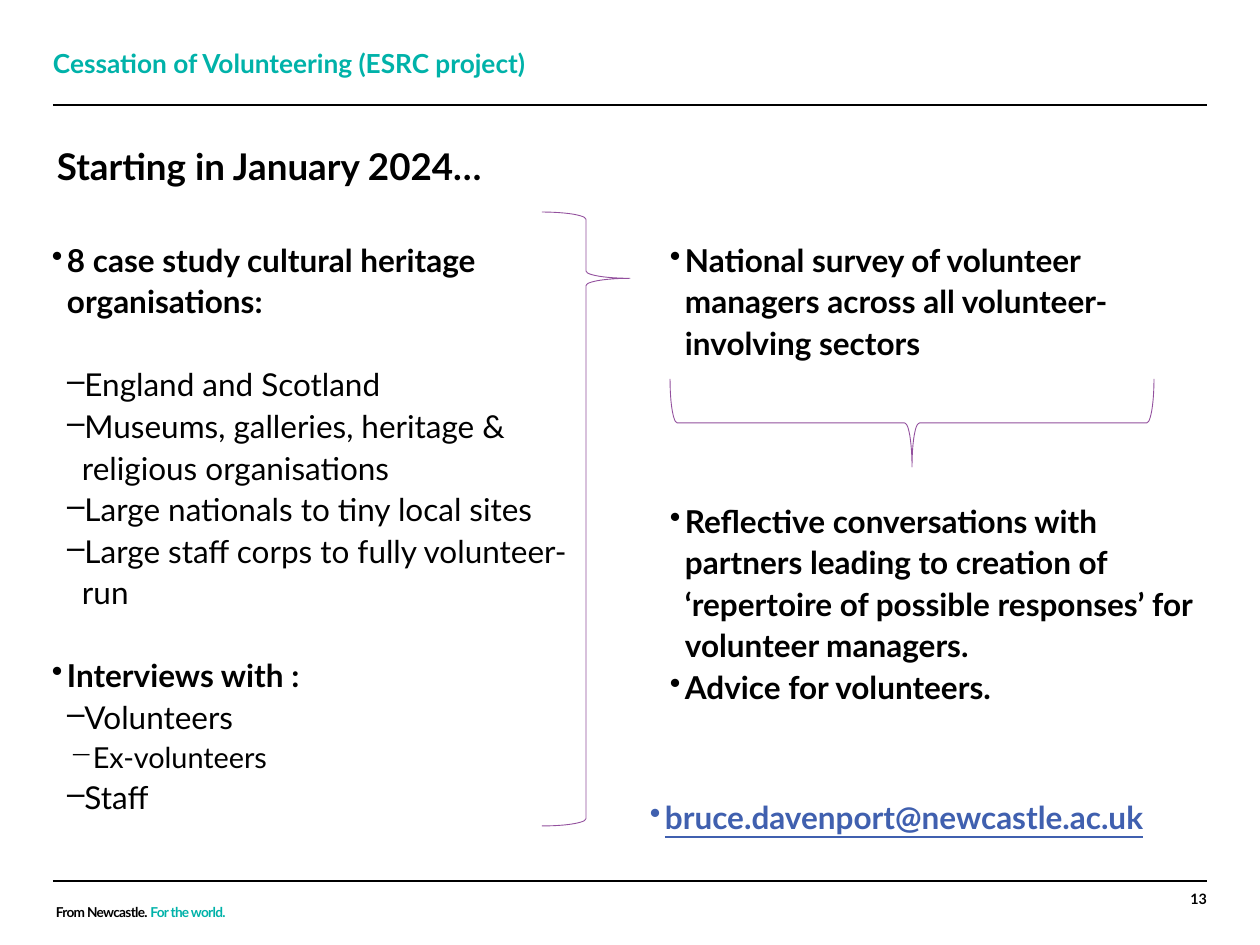
from lxml import etree
from pptx import Presentation
from pptx.dml.color import RGBColor
from pptx.enum.shapes import MSO_CONNECTOR, MSO_SHAPE
from pptx.enum.text import MSO_ANCHOR, MSO_AUTO_SIZE, PP_ALIGN
from pptx.oxml.ns import qn
from pptx.util import Emu, Pt

STRAIGHT = MSO_CONNECTOR.STRAIGHT
RIGHT_BRACE = MSO_SHAPE.RIGHT_BRACE
TOP = MSO_ANCHOR.TOP
NO_AUTOFIT = MSO_AUTO_SIZE.NONE
LEFT, RIGHT = PP_ALIGN.LEFT, PP_ALIGN.RIGHT

BLACK = RGBColor(0x00, 0x00, 0x00)
TEAL = RGBColor(0x00, 0xB2, 0xA9)
PURPLE = RGBColor(0x93, 0x50, 0x9E)
BLUE = RGBColor(0x40, 0x60, 0xAF)

FONT = "Lato"
PX_PER_INCH = 126
BLANK_LINE = 23.76
LEVELS = {
    0: {"char": "•", "margin": 15, "size": 18, "bold": True},
    1: {"char": "–", "margin": 30, "size": 18, "bold": False},
    3: {"char": "−", "margin": 33, "size": 16.5, "bold": False},
}
HANGING = 15


def px(length):
    """Convert pixels to EMU."""
    return Emu(round(length * 914400 / PX_PER_INCH))


def set_frame(frame, inset=0):
    """Give a text frame wrapping, top anchoring and equal insets."""
    settings = {
        "word_wrap": True, "auto_size": NO_AUTOFIT, "vertical_anchor": TOP,
        "margin_left": px(inset), "margin_right": px(inset),
        "margin_top": px(inset), "margin_bottom": px(inset),
    }
    for name, value in settings.items():
        setattr(frame, name, value)


def add_frame(slide, box):
    """Add an empty text box and return its frame."""
    frame = slide.shapes.add_textbox(*map(px, box)).text_frame
    set_frame(frame)
    return frame


def add_run(paragraph, text, size, color=BLACK, **formats):
    """Add a formatted run to a paragraph."""
    run = paragraph.add_run()
    run.text = text
    run.font.color.rgb = color
    for name, value in {"name": FONT, "size": Pt(size), **formats}.items():
        setattr(run.font, name, value)
    return run


def add_bullets(slide, box, items, color=BLACK, **formats):
    """Fill a box with (level, text, space before) bullet items."""
    frame = add_frame(slide, box)
    for index, (level, text, gap) in enumerate(items):
        style = LEVELS[level]
        paragraph = frame.add_paragraph() if index else frame.paragraphs[0]
        properties = paragraph._p.get_or_add_pPr()
        properties.set("marL", str(px(style["margin"])))
        properties.set("indent", str(-px(HANGING)))
        etree.SubElement(properties, qn("a:buChar")).set("char", style["char"])
        paragraph.level = level
        paragraph.line_spacing = 1.1
        if gap:
            paragraph.space_before = Pt(gap)
        add_run(paragraph, text, style["size"], color, bold=style["bold"], **formats)


def add_rule(slide, left, top, width):
    """Draw a thin horizontal black rule."""
    rule = slide.shapes.add_connector(
        STRAIGHT, px(left), px(top), px(left + width), px(top))
    rule.line.color.rgb = BLACK
    rule.line.width = Pt(1)
    etree.SubElement(rule._element.spPr, qn("a:effectLst"))


def add_brace(slide, box, curve=0.083, point=0.5, rotation=0):
    """Draw an outlined brace."""
    brace = slide.shapes.add_shape(RIGHT_BRACE, *map(px, box))
    brace.adjustments[0] = curve
    brace.adjustments[1] = point
    brace.rotation = rotation
    brace.shadow.inherit = False
    brace.fill.background()
    brace.line.color.rgb = PURPLE
    brace.line.width = Pt(0.5)


def add_header(slide, left, top, width):
    """Place the running heading, its rule and the slide title."""
    heading = add_frame(slide, (left, top, width, 43)).paragraphs[0]
    heading.line_spacing = 1.1
    add_run(heading, "Cessation of Volunteering (ESRC project)", 15, TEAL, bold=True)
    add_rule(slide, left, top + 61, width)

    title = slide.shapes.title
    box = {"left": left + 4, "top": top + 100, "width": width - 4, "height": 68}
    for name, value in box.items():
        setattr(title, name, px(value))
    set_frame(title.text_frame)
    paragraph = title.text_frame.paragraphs[0]
    paragraph.alignment = LEFT
    add_run(paragraph, "Starting in January 2024…", 21, bold=True)


def add_case_studies(slide, left, top):
    """Place the case study column and the brace at its side."""
    add_bullets(slide, (left, top, 535, 614), [
        (0, "8 case study cultural heritage organisations:", 0),
        (1, "England and Scotland", BLANK_LINE),
        (1, "Museums, galleries, heritage & religious organisations", 0),
        (1, "Large nationals to tiny local sites", 0),
        (1, "Large staff corps to fully volunteer-run", 0),
        (0, "Interviews with :", BLANK_LINE),
        (1, "Volunteers", 0),
        (3, "Ex-volunteers", 0),
        (1, "Staff", 0),
    ])
    add_brace(slide, (left + 490, top - 25, 88, 614), point=0.108)


def add_outcomes(slide, left, top):
    """Place the survey, the brace below it, the outcomes and the contact."""
    width = 535
    add_bullets(slide, (left, top, width, 164), [
        (0, "National survey of volunteer managers across all "
            "volunteer-involving sectors", 0),
    ])
    add_brace(slide, (left + 198, top - 56, 88, 484), rotation=90)
    add_bullets(slide, (left, top + 261, width, 226), [
        (0, "Reflective conversations with partners leading to creation of "
            "‘repertoire of possible responses’ for volunteer managers.", 0),
        (0, "Advice for volunteers.", 0),
    ])
    add_bullets(slide, (left - 20, top + 557, width + 41, 64),
                [(0, "bruce.davenport@newcastle.ac.uk", 0)], BLUE, underline=True)


def add_footer(slide, left, top, width):
    """Place the bottom rule, the slogan and the page number."""
    add_rule(slide, left, top, width)
    slogan = add_frame(slide, (left + 3, top + 20, 200, 25)).paragraphs[0]
    for text, color in (("From Newcastle. ", BLACK), ("For the world.", TEAL)):
        run = add_run(slogan, text, 13.5, color, bold=True)
        for name, value in {"baseline": "30000", "spc": "-40"}.items():
            run.font._element.set(name, value)
    page = add_frame(slide, (left + width - 65, top + 9, 65, 48)).paragraphs[0]
    page.alignment = RIGHT
    add_run(page, "13", 8.2, bold=True)


def main():
    """Build and save the slide."""
    presentation = Presentation()
    presentation.slide_width, presentation.slide_height = px(1260), px(945)
    slide = presentation.slides.add_slide(presentation.slide_layouts[5])
    add_header(slide, 53, 44, 1154)
    add_case_studies(slide, 52, 237)
    add_outcomes(slide, 670, 237)
    add_footer(slide, 53, 881, 1154)
    presentation.save("out.pptx")


if __name__ == "__main__":
    main()
